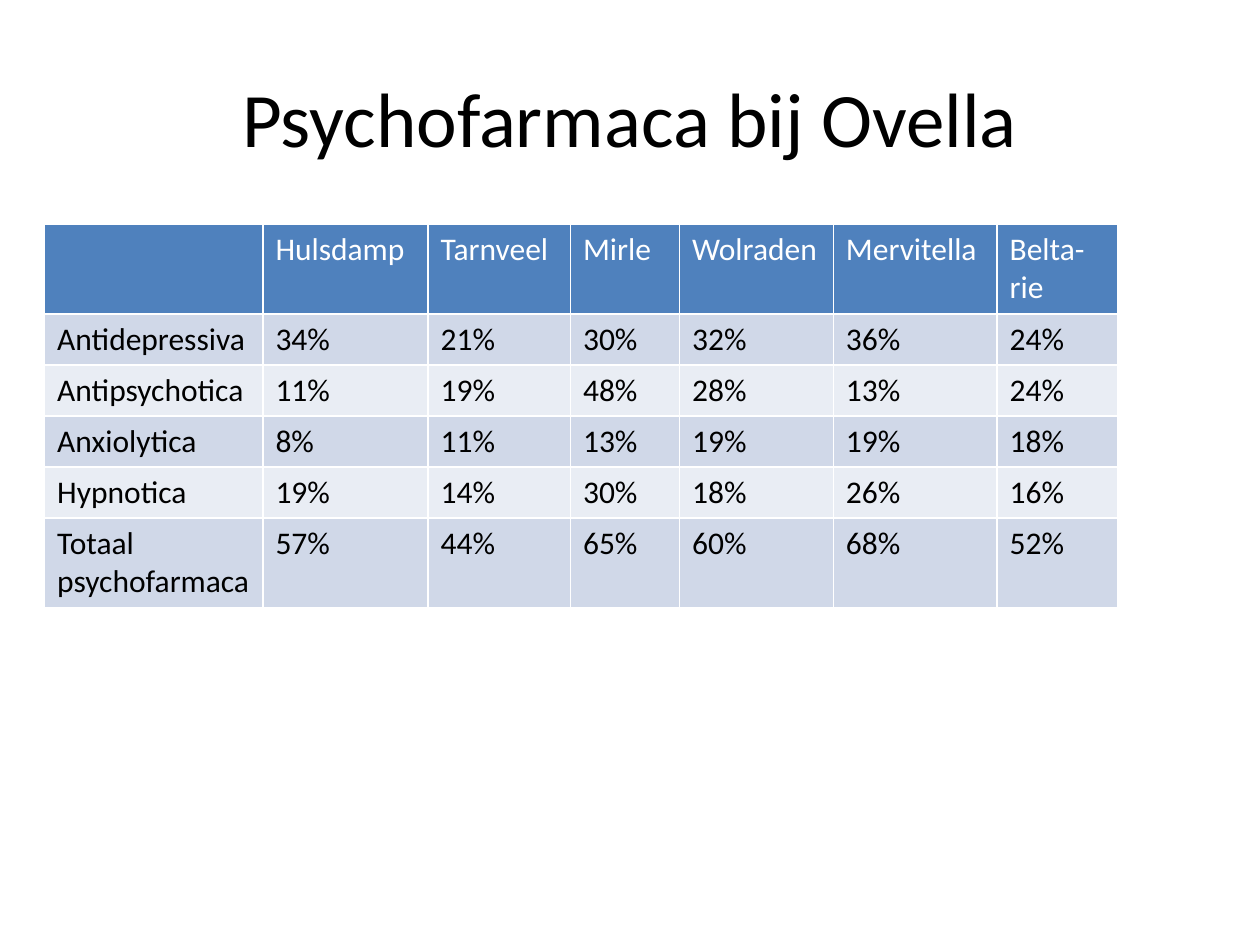
"""Build a slide with a table of psychotropic drug use per care location."""
from lxml import etree
from pptx import Presentation
from pptx import util as u
from pptx.dml.color import RGBColor
from pptx.enum import text
from pptx.oxml import ns

TITLE = "Psychofarmaca bij Ovella"
ROWS = [
    ("", "Hulsdamp", "Tarnveel", "Mirle", "Wolraden", "Mervitella", "Belta-rie"),
    ("Antidepressiva", "34%", "21%", "30%", "32%", "36%", "24%"),
    ("Antipsychotica", "11%", "19%", "48%", "28%", "13%", "24%"),
    ("Anxiolytica", "8%", "11%", "13%", "19%", "19%", "18%"),
    ("Hypnotica", "19%", "14%", "30%", "18%", "26%", "16%"),
    ("Totaal psychofarmaca", "57%", "44%", "65%", "60%", "68%", "52%"),
]
COL_WIDTHS = (4.4, 3.33, 2.87, 2.2, 3.1, 3.3, 2.44)
ROW_HEIGHTS = (1.8, 1.03, 1.03, 1.03, 1.03, 1.8)
COLORS = {"header": "4F81BD", "odd": "D0D8E8", "even": "E9EDF4",
          "light": "FFFFFF", "dark": "000000"}
TITLE_BOX = {"left": 1.27, "top": 0.76, "width": 22.86, "height": 3.18}
TITLE_FONT = {"name": "Calibri", "size": u.Pt(44)}
CELL_FONT = {"name": "Calibri", "size": u.Pt(18), "bold": False}


def rgb(key):
    return RGBColor.from_string(COLORS[key])


def write(tf, content, fmt, color):
    p = tf.paragraphs[0]
    r = p.add_run()
    r.text = content
    for name, value in fmt.items():
        setattr(r.font, name, value)
    r.font.color.rgb = rgb(color)
    return p


def add_borders(cell):
    tc_pr = cell._tc.get_or_add_tcPr()
    for side in "LRTB":
        ln = etree.SubElement(tc_pr, ns.qn(f"a:ln{side}"), w=str(u.Pt(1)))
        fill = etree.SubElement(ln, ns.qn("a:solidFill"))
        etree.SubElement(fill, ns.qn("a:srgbClr"), val=COLORS["light"])


def add_title(s):
    sp = s.shapes.title
    for name, value in TITLE_BOX.items():
        setattr(sp, name, u.Cm(value))
    sp.text_frame.vertical_anchor = text.MSO_ANCHOR.MIDDLE
    p = write(sp.text_frame, TITLE, TITLE_FONT, "dark")
    p.alignment = text.PP_ALIGN.CENTER


def add_rates(s):
    table = s.shapes.add_table(
        len(ROWS), len(COL_WIDTHS), u.Cm(0.9), u.Cm(4.52),
        u.Cm(sum(COL_WIDTHS)), u.Cm(sum(ROW_HEIGHTS))).table
    for col, width in zip(table.columns, COL_WIDTHS):
        col.width = u.Cm(width)
    for i, (row, height) in enumerate(zip(table.rows, ROW_HEIGHTS)):
        row.height = u.Cm(height)
        band = "header" if i == 0 else "odd" if i % 2 else "even"
        for cell, content in zip(row.cells, ROWS[i]):
            add_borders(cell)
            cell.fill.solid()
            cell.fill.fore_color.rgb = rgb(band)
            if content:
                write(cell.text_frame, content, CELL_FONT, "dark" if i else "light")


def main():
    prs = Presentation()
    prs.slide_width, prs.slide_height = u.Cm(25.4), u.Cm(19.05)
    s = prs.slides.add_slide(prs.slide_layouts[5])
    add_title(s)
    add_rates(s)
    prs.save("out.pptx")


if __name__ == "__main__":
    main()
